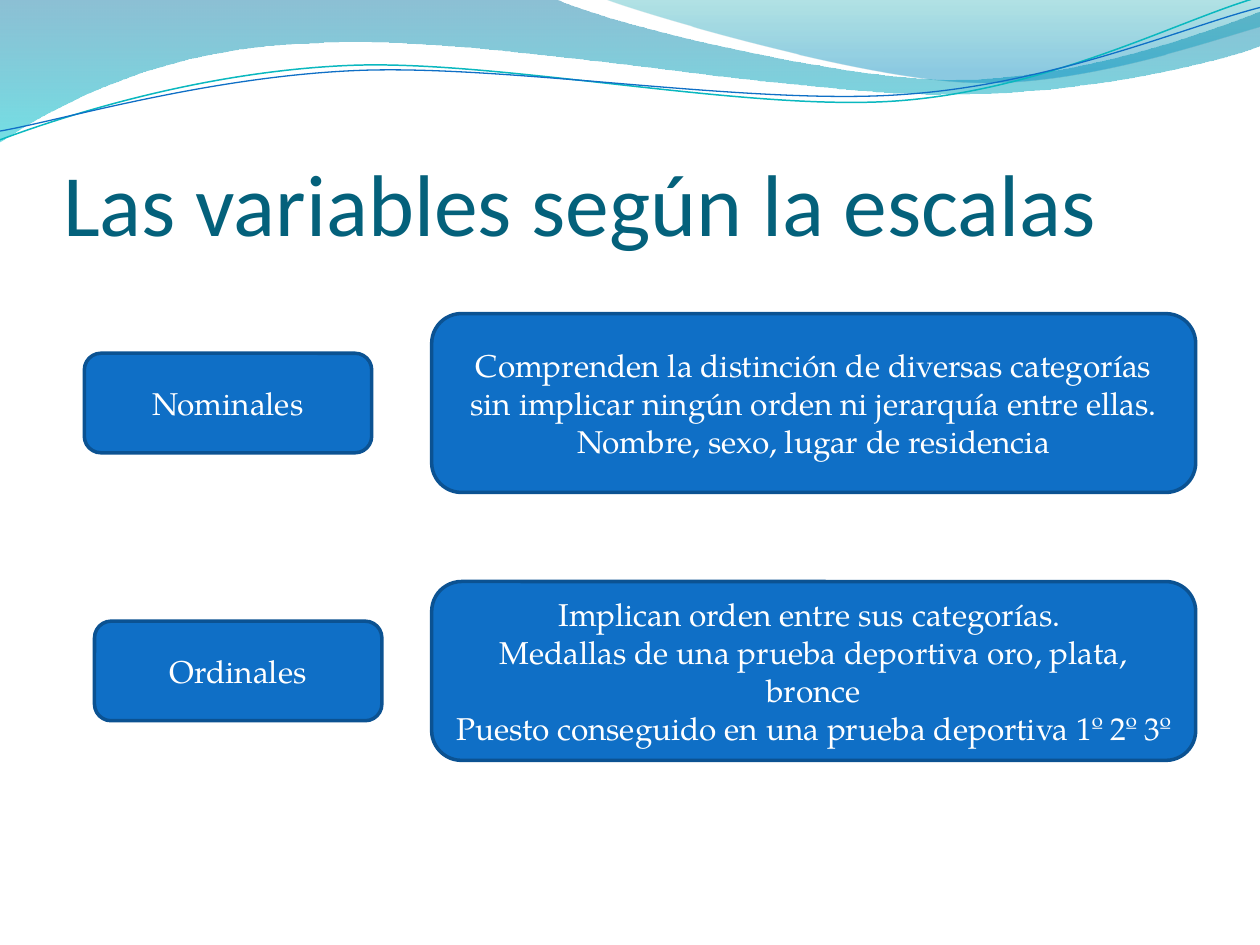
import math

from lxml import etree
from pptx import Presentation
from pptx import util as u
from pptx.dml.color import RGBColor
from pptx.enum import shapes, text
from pptx.oxml.ns import qn

SERIF = "TeX Gyre Pagella"
BLUE, DARK_BLUE, TEAL, WHITE = "0F6FC6", "0B5292", "04617B", "FFFFFF"

WAVES = [
    {
        "path": [
            (0, 0), (317, -0.7),
            (342.7, 12.2, 478, 45.4, 545.8, 45.4),
            (614.2, 45.4, 689.8, 18.7, 720, 6.5),
            (720.7, 25.9),
            (707.8, 31.7, 626.4, 54.7, 537.1, 54),
            (447.8, 54, 275, 20.2, 185, 24.5),
            (92.9, 25.9, 33.1, 59.8, -0.7, 81.4),
            (0, 0),
        ],
        "stops": [(0, "0074A1", 45), (1, "00C6CF", 55)],
    },
    {
        "path": [
            (344.9, -0.7),
            (366.5, 7.9, 491, 44.6, 553.7, 46.8),
            (616.3, 49.7, 691.9, 23, 720, 15.1),
            (720, 0), (344.9, -0.7),
        ],
        "stops": [(0, "00A1A9", 30), (0.8, "008BBF", 45)],
    },
]
RIBBONS = [
    {
        "path": [
            (0, 79.9),
            (34.6, 67, 113.8, 41, 199.4, 37.4),
            (284.4, 33.8, 427, 64.1, 513.4, 57.6),
            (599.8, 51.1, 675.4, 10.8, 718.6, -1.4),
        ],
        "color": "0AB8BF", "width": 0.85, "center": (359.3, 41.4),
    },
    {
        "path": [
            (0, 74.9),
            (33.8, 69.1, 118.1, 43.9, 203.8, 40.3),
            (290.2, 36.7, 429.8, 60.5, 516.2, 54),
            (601.9, 48.2, 677.5, 15.1, 720, 4.3),
        ],
        "color": BLUE, "width": 0.75, "center": (359.6, 42.5),
    },
]
TILT = 2.7

SCALES = [
    ("Nominales", 48.2, [
        "Comprenden la distinción de diversas categorías sin implicar ningún orden ni jerarquía entre ellas.",
        "Nombre, sexo, lugar de residencia",
    ]),
    ("Ordinales", 54, [
        "Implican orden entre sus categorías. ",
        "Medallas de una prueba deportiva oro, plata, bronce",
        "Puesto conseguido en una prueba deportiva 1º 2º 3º",
    ]),
]


def color(value):
    return RGBColor.from_string(value)


def rotate(point, center, degrees):
    cosine, sine = math.cos(math.radians(degrees)), math.sin(math.radians(degrees))
    x, y = point[0] - center[0], point[1] - center[1]
    return center[0] + x * cosine - y * sine, center[1] + x * sine + y * cosine


def add_outline(slide, path, close, center=(0, 0), tilt=0):
    points = [
        rotate(step[index:index + 2], center, tilt)
        for step in path for index in range(0, len(step), 2)
    ]
    corners = [(u.Pt(x), u.Pt(y)) for x, y in points]
    builder = slide.shapes.build_freeform(*corners[0])
    builder.add_line_segments(corners[1:], close=close)
    shape = builder.convert_to_shape()
    shape.shadow.inherit = False
    shape.rotation = -tilt % 360
    segments = iter(shape.element.spPr.findall(".//" + qn("a:lnTo")))
    for step in path[1:]:
        segment = next(segments)
        if len(step) == 6:
            curve = etree.Element(qn("a:cubicBezTo"))
            segment.addprevious(curve)
            for part in (segment, next(segments), next(segments)):
                curve.append(part[0])
                part.getparent().remove(part)
    return shape


def add_wave(slide, wave):
    shape = add_outline(slide, wave["path"], True)
    shape.line.fill.background()
    shape.fill.gradient()
    shape.fill.gradient_angle = 270
    for stop, (position, value, _) in zip(shape.fill.gradient_stops, wave["stops"]):
        stop.position = position
        stop.color.rgb = color(value)
    fills = shape.element.spPr.findall(".//" + qn("a:srgbClr"))
    for element, (_, _, opacity) in zip(fills, wave["stops"]):
        etree.SubElement(element, qn("a:alpha")).set("val", str(opacity * 1000))


def add_ribbon(slide, ribbon):
    shape = add_outline(slide, ribbon["path"], False, ribbon["center"], TILT)
    shape.fill.background()
    shape.line.color.rgb = color(ribbon["color"])
    shape.line.width = u.Pt(ribbon["width"])


def add_header(slide):
    for wave in WAVES:
        add_wave(slide, wave)
    for ribbon in RIBBONS:
        add_ribbon(slide, ribbon)


def write(shape, lines, font_values, alignment, frame_values):
    frame = shape.text_frame
    for name, value in {"word_wrap": True, **frame_values}.items():
        setattr(frame, name, value)
    for index, line in enumerate(lines):
        paragraph = frame.add_paragraph() if index else frame.paragraphs[0]
        paragraph.alignment = alignment
        run = paragraph.add_run()
        run.text = line
        font = dict(font_values)
        run.font.color.rgb = color(font.pop("color"))
        for name, value in font.items():
            setattr(run.font, name, value)


def add_title(slide, left, top, width, height):
    box = slide.shapes.add_textbox(u.Pt(left), u.Pt(top), u.Pt(width), u.Pt(height))
    write(
        box, ["Las variables según la escalas"],
        {"name": "Calibri", "size": u.Pt(50), "color": TEAL},
        text.PP_ALIGN.LEFT,
        {
            "vertical_anchor": text.MSO_ANCHOR.BOTTOM,
            "margin_left": 0, "margin_right": 0, "margin_bottom": 0,
            "margin_top": u.Pt(3.6),
        },
    )


def add_card(slide, left, top, width, height, lines):
    shape = slide.shapes.add_shape(
        shapes.MSO_SHAPE.ROUNDED_RECTANGLE,
        u.Pt(left), u.Pt(top), u.Pt(width), u.Pt(height),
    )
    shape.shadow.inherit = False
    shape.fill.solid()
    shape.fill.fore_color.rgb = color(BLUE)
    shape.line.color.rgb = color(DARK_BLUE)
    shape.line.width = u.Pt(2)
    write(
        shape, lines, {"name": SERIF, "size": u.Pt(18), "color": WHITE},
        text.PP_ALIGN.CENTER, {"vertical_anchor": text.MSO_ANCHOR.MIDDLE},
    )


def add_scales(slide, left, top, width, height, pitch):
    label_width, label_height = 164.2, 56.9
    for row, (label, label_left, lines) in enumerate(SCALES):
        row_top = top + row * pitch
        label_top = row_top + (height - label_height) / 2
        add_card(slide, label_left, label_top, label_width, label_height, [label])
        add_card(slide, left, row_top, width, height, lines)


def main():
    presentation = Presentation()
    presentation.slide_width, presentation.slide_height = u.Pt(720), u.Pt(540)
    slide = presentation.slides.add_slide(presentation.slide_layouts[6])
    add_header(slide)
    add_title(slide, 36, 55.4, 653.8, 90)
    add_scales(slide, 246.7, 179.2, 436.6, 102.2, 153.1)
    presentation.save("out.pptx")


if __name__ == "__main__":
    main()
